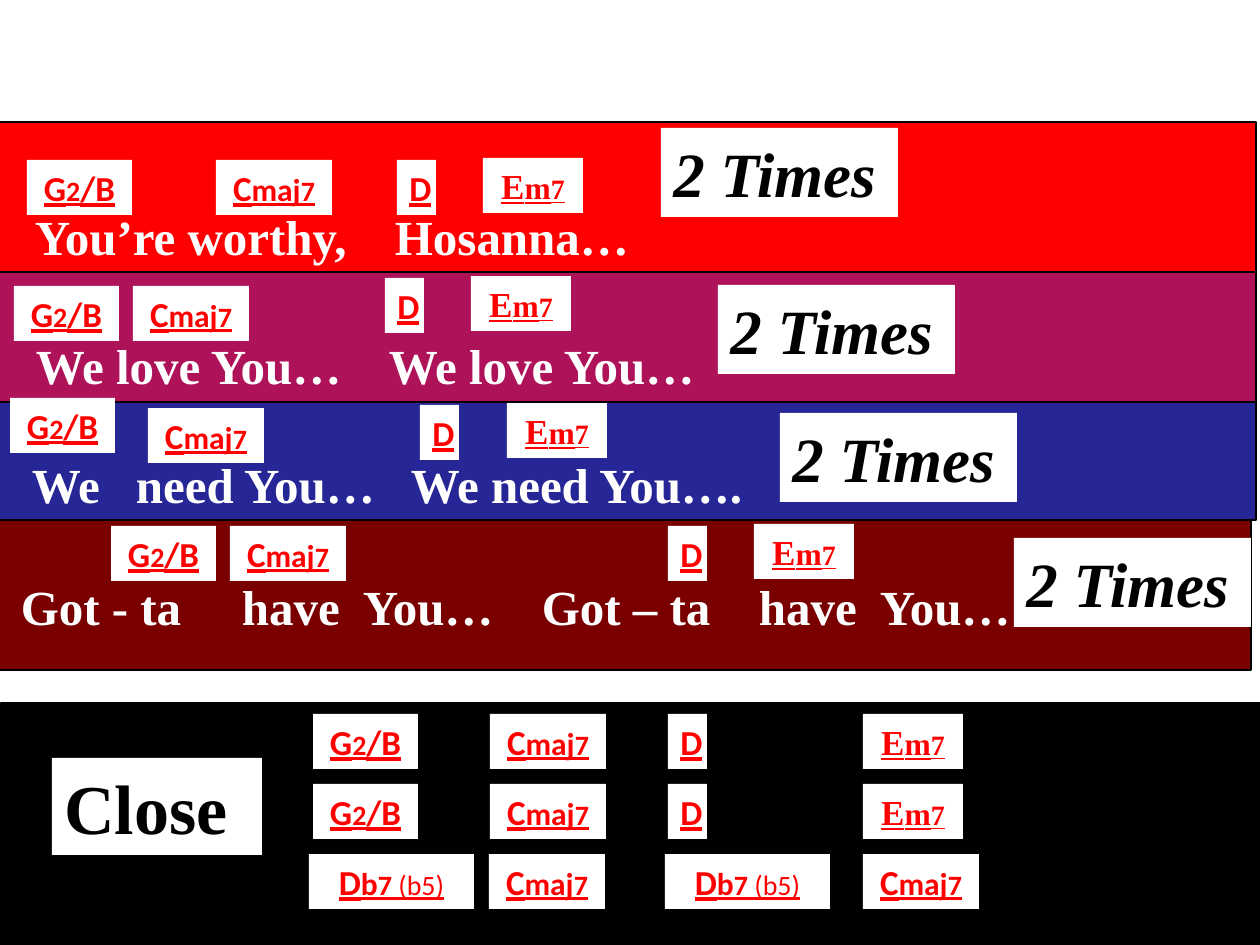
from lxml import etree
from pptx import Presentation
from pptx.dml.color import RGBColor
from pptx.enum.shapes import MSO_SHAPE
from pptx.enum.text import MSO_ANCHOR, PP_ALIGN
from pptx.oxml.ns import qn
from pptx.util import Pt

RECTANGLE = MSO_SHAPE.RECTANGLE
MIDDLE = MSO_ANCHOR.MIDDLE
LEFT, CENTER = PP_ALIGN.LEFT, PP_ALIGN.CENTER

WHITE = RGBColor(255, 255, 255)
BLACK = RGBColor(0, 0, 0)
RED = RGBColor(255, 0, 0)
MAGENTA = RGBColor(0xAE, 0x12, 0x59)
BLUE = RGBColor(0x26, 0x26, 0x96)
MAROON = RGBColor(0x7A, 0, 0)
SANS, SERIF = "Calibri", "Times New Roman"

CHORDS = {
    "G2/B": (105, SANS, [("G", 20, True), ("2", 16, True), ("/B", 20, True)]),
    "Cmaj7": (116, SANS, [("C", 20, True), ("maj", 18, True), ("7", 16, True)]),
    "D": (39, SANS, [("D", 20, True)]),
    "Em7": (100, SERIF, [("E", 20, True), ("m", 18, True), ("7", 16, True)]),
    "Db7": (165, SANS, [("D", 20, True), ("b", 18, True), ("7 ", 16, True), ("(b5)", 16, False)]),
}
CHORD_HEIGHT = 55

VERSES = [
    {
        "band": (-6, 122, 150, RED),
        "lyric_top": 200,
        "phrases": [("You’re worthy,", 35), ("Hosanna…", 395)],
        "chords": [("G2/B", 27, 160), ("Cmaj7", 216, 160), ("D", 397, 160), ("Em7", 483, 158)],
        "times": (661, 128),
    },
    {
        "band": (-6, 252, 150, MAGENTA),
        "lyric_top": 329,
        "phrases": [("We love You…", 36), ("We love You…", 389)],
        "chords": [("G2/B", 14, 286), ("Cmaj7", 133, 286), ("D", 385, 278), ("Em7", 471, 276)],
        "times": (718, 285),
    },
    {
        "band": (-6, 384, 136, BLUE),
        "lyric_top": 448,
        "phrases": [("We", 32), ("need You…", 136), ("We need You….", 411)],
        "chords": [("G2/B", 10, 398), ("Cmaj7", 148, 408), ("D", 420, 405), ("Em7", 507, 403)],
        "times": (780, 413),
    },
    {
        "band": (-11, 520, 150, MAROON),
        "lyric_top": 570,
        "phrases": [("Got - ta", 21), ("have", 242), ("You…", 363),
                    ("Got – ta", 542), ("have", 759), ("You…", 880)],
        "chords": [("G2/B", 111, 526), ("Cmaj7", 230, 526), ("D", 668, 526), ("Em7", 754, 524)],
        "times": (1014, 538),
    },
]

CLOSE_TOP, CLOSE_STEP = 714, 70
CLOSE_ROWS = [
    [("G2/B", 313), ("Cmaj7", 490), ("D", 668), ("Em7", 863)],
    [("G2/B", 313), ("Cmaj7", 490), ("D", 668), ("Em7", 863)],
    [("Db7", 309), ("Cmaj7", 489), ("Db7", 665), ("Cmaj7", 863)],
]


def px(length):
    return round(length * 914400 / 126)


presentation = Presentation()
presentation.slide_width = px(1260)
presentation.slide_height = px(945)
slide = presentation.slides.add_slide(presentation.slide_layouts[6])


def add_box(left, top, width, height, fill, outlined=False):
    shape = slide.shapes.add_shape(RECTANGLE, px(left), px(top), px(width), px(height))
    shape.shadow.inherit = False
    shape.fill.solid()
    shape.fill.fore_color.rgb = fill
    if outlined:
        shape.line.color.rgb = BLACK
        shape.line.width = Pt(0.75)
    else:
        shape.line.fill.background()
    return shape


def prepare_paragraph(shape, alignment):
    frame = shape.text_frame
    frame.word_wrap = True
    frame.vertical_anchor = MIDDLE
    paragraph = frame.paragraphs[0]
    paragraph.alignment = alignment
    return paragraph


def add_run(paragraph, text, size, name, color, bold=True, italic=False, underline=False):
    run = paragraph.add_run()
    run.text = text
    font = run.font
    font.size, font.name = Pt(size), name
    font.bold, font.italic, font.underline = bold, italic, underline
    font.color.rgb = color


def add_chord(chord, left, top):
    width, name, parts = CHORDS[chord]
    paragraph = prepare_paragraph(add_box(left, top, width, CHORD_HEIGHT, WHITE), CENTER)
    for text, size, bold in parts:
        add_run(paragraph, text, size, name, RED, bold=bold, underline=True)


def add_label(text, left, top, width, height, size, italic):
    paragraph = prepare_paragraph(add_box(left, top, width, height, WHITE), LEFT)
    add_run(paragraph, text, size, SERIF, BLACK, italic=italic)


def add_lyric(phrases, top):
    box = slide.shapes.add_textbox(0, px(top), px(1260), px(72))
    start = phrases[0][1]
    box.text_frame.margin_left = px(start)
    paragraph = prepare_paragraph(box, LEFT)
    properties = paragraph._p.get_or_add_pPr()
    tabs = etree.SubElement(properties, qn("a:tabLst"))
    for text, left in phrases[1:]:
        etree.SubElement(tabs, qn("a:tab"), pos=str(px(left - start)), algn="l")
    add_run(paragraph, "\t".join(text for text, left in phrases), 28, SERIF, WHITE)


for verse in reversed(VERSES):
    left, top, height, color = verse["band"]
    add_box(left, top, 1262, height, color, outlined=True)

for verse in VERSES:
    add_lyric(verse["phrases"], verse["lyric_top"])
    for chord in verse["chords"]:
        add_chord(*chord)
    add_label("2 Times", *verse["times"], 237, 89, 36, italic=True)

add_box(1, 703, 1259, 242, BLACK, outlined=True)
add_label("Close", 52, 758, 210, 97, 40, italic=False)
for row, chords in enumerate(CLOSE_ROWS):
    for chord, left in chords:
        add_chord(chord, left, CLOSE_TOP + row * CLOSE_STEP)

presentation.save("out.pptx")
